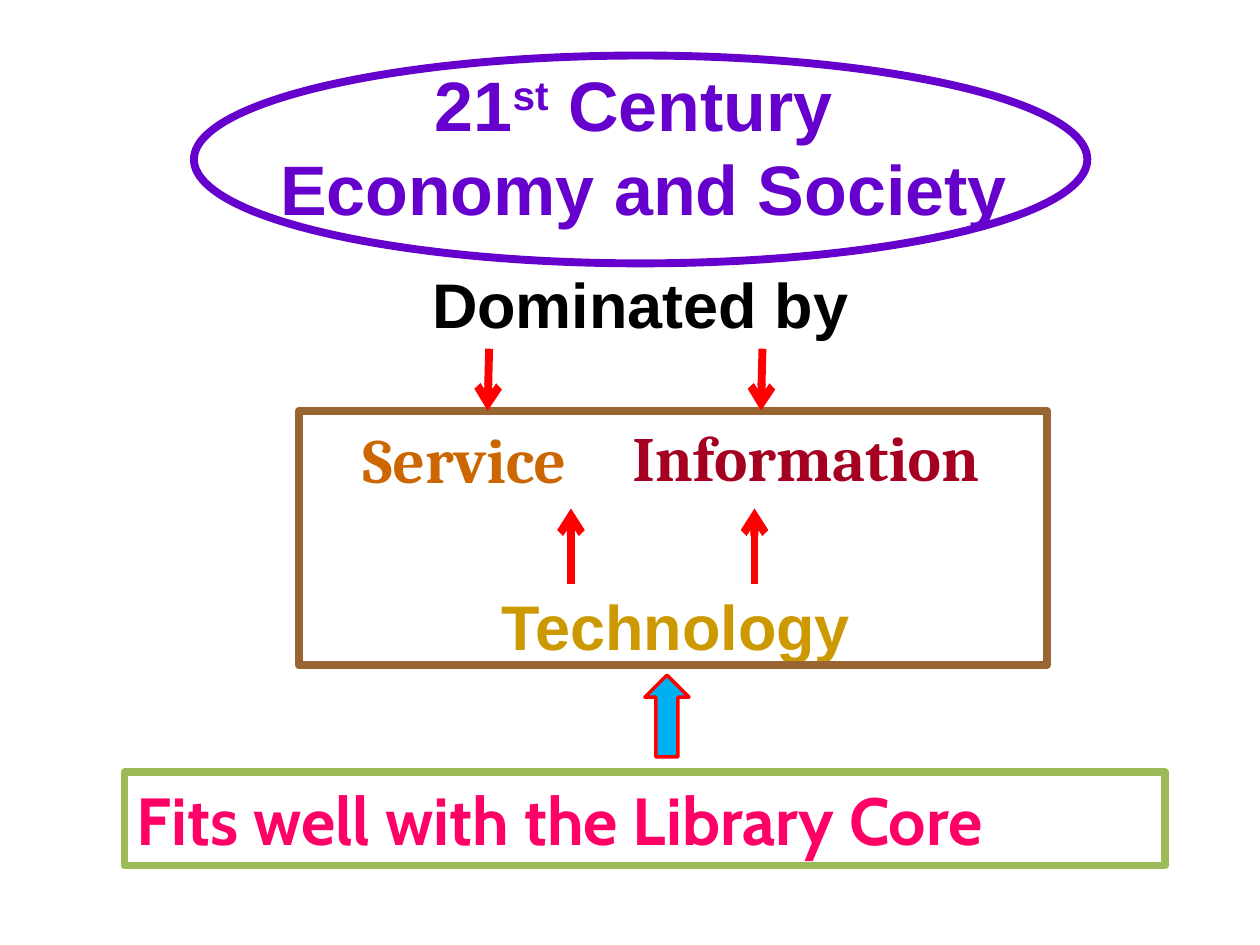
from lxml import etree
from pptx import Presentation
from pptx import util as u
from pptx.dml.color import RGBColor
from pptx.enum import shapes, text
from pptx.oxml.ns import qn

PURPLE = RGBColor(0x66, 0x00, 0xCC)
ORANGE = RGBColor(0xCC, 0x66, 0x00)
CRIMSON = RGBColor(0xA5, 0x00, 0x21)
GOLD = RGBColor(0xCC, 0x99, 0x00)
PINK = RGBColor(0xFF, 0x00, 0x66)
GREEN = RGBColor(0x9B, 0xBB, 0x59)
RED = RGBColor(0xFF, 0x00, 0x00)
BROWN = RGBColor(0x99, 0x66, 0x33)
SKY = RGBColor(0x00, 0xB0, 0xF0)
BLACK = RGBColor(0x00, 0x00, 0x00)

LABEL_HEIGHT = 1.8


def add_outline(slide, kind, box, color, width=4.5, fill=None):
    shape = slide.shapes.add_shape(kind, *map(u.Cm, box))
    shape.shadow.inherit = False
    if fill is None:
        shape.fill.background()
    else:
        shape.fill.solid()
        shape.fill.fore_color.rgb = fill
    shape.line.color.rgb = color
    shape.line.width = u.Pt(width)
    return shape


def write(shape, lines, size, font, color, align=text.PP_ALIGN.LEFT):
    """Each line is a list of (text, is superscript) runs."""
    frame = shape.text_frame
    frame.word_wrap = True
    frame.auto_size = text.MSO_AUTO_SIZE.SHAPE_TO_FIT_TEXT
    frame.vertical_anchor = text.MSO_ANCHOR.TOP
    for index, runs in enumerate(lines):
        paragraph = frame.add_paragraph() if index else frame.paragraphs[0]
        paragraph.alignment = align
        for words, superscript in runs:
            run = paragraph.add_run()
            run.text = words
            run.font.size = u.Pt(size)
            run.font.name = font
            run.font.bold = True
            run.font.color.rgb = color
            if superscript:
                run.font._element.set("baseline", "30000")


def add_label(slide, box, words, font, color):
    label = slide.shapes.add_textbox(*map(u.Cm, box))
    write(label, [[(words, False)]], 36, font, color)


def add_arrow(slide, start, end):
    arrow = slide.shapes.add_connector(
        shapes.MSO_CONNECTOR.STRAIGHT, *map(u.Cm, (*start, *end)))
    arrow.line.color.rgb = RED
    arrow.line.width = u.Pt(4.5)
    etree.SubElement(arrow.line._get_or_add_ln(), qn("a:tailEnd"), type="arrow")
    etree.SubElement(arrow._element.spPr, qn("a:effectLst"))


def add_heading(slide, left, top, width, height):
    # Title text inside its ellipse
    title = slide.shapes.add_textbox(
        *map(u.Cm, (left + 1.4, top, 15.32, 3.68)))
    write(title,
          [[("21", False), ("st", True), (" Century ", False)],
           [("Economy and Society", False)]],
          40, "Arial", PURPLE, text.PP_ALIGN.CENTER)
    add_outline(slide, shapes.MSO_SHAPE.OVAL, (left, top, width, height), PURPLE)


def add_dominated_by(slide, left, top, width, height):
    # Caption with two arrows down to the frame
    add_label(slide, (left, top, width, LABEL_HEIGHT), "Dominated by", "Arial", BLACK)
    for x in (1.4, 6.91):
        add_arrow(slide, (left + x, top + LABEL_HEIGHT), (left + x - 0.03, top + height))


def add_sectors(slide, left, top, width, height):
    # Service and Information, both supported by Technology
    for x, y, label_width, words, font, color in (
            (1.04, 0.08, 5.33, "Service", "Cambria", ORANGE),
            (6.48, 0.03, 8.69, "Information", "Cambria", CRIMSON),
            (3.84, 3.43, 7.62, "Technology", "Arial", GOLD)):
        add_label(slide, (left + x, top + y, label_width, LABEL_HEIGHT),
                  words, font, color)
    for x in (5.49, 9.19):
        add_arrow(slide, (left + x, top + 3.5), (left + x, top + 1.97))
    add_outline(slide, shapes.MSO_SHAPE.RECTANGLE, (left, top, width, height), BROWN)


def add_conclusion(slide, left, top, width, height):
    # Block arrow above the closing bar
    add_outline(slide, shapes.MSO_SHAPE.UP_ARROW,
                (left + 10.49, top, 0.89, 1.65), RED, 2, SKY)
    bar = add_outline(slide, shapes.MSO_SHAPE.RECTANGLE,
                      (left, top + 1.96, width, height - 1.96), GREEN)
    write(bar, [[("Fits well with the Library Core", False)]], 38, "Cabin", PINK)


def main():
    presentation = Presentation()
    presentation.slide_width = u.Cm(25.4)
    presentation.slide_height = u.Cm(19.05)
    slide = presentation.slides.add_slide(presentation.slide_layouts[6])
    add_heading(slide, 3.91, 1.12, 18.01, 4.19)
    add_sectors(slide, 6.02, 8.28, 15.09, 5.13)
    add_dominated_by(slide, 8.46, 5.23, 8.99, 3.05)
    add_conclusion(slide, 2.51, 13.61, 20.98, 3.84)
    presentation.save("out.pptx")


if __name__ == "__main__":
    main()
